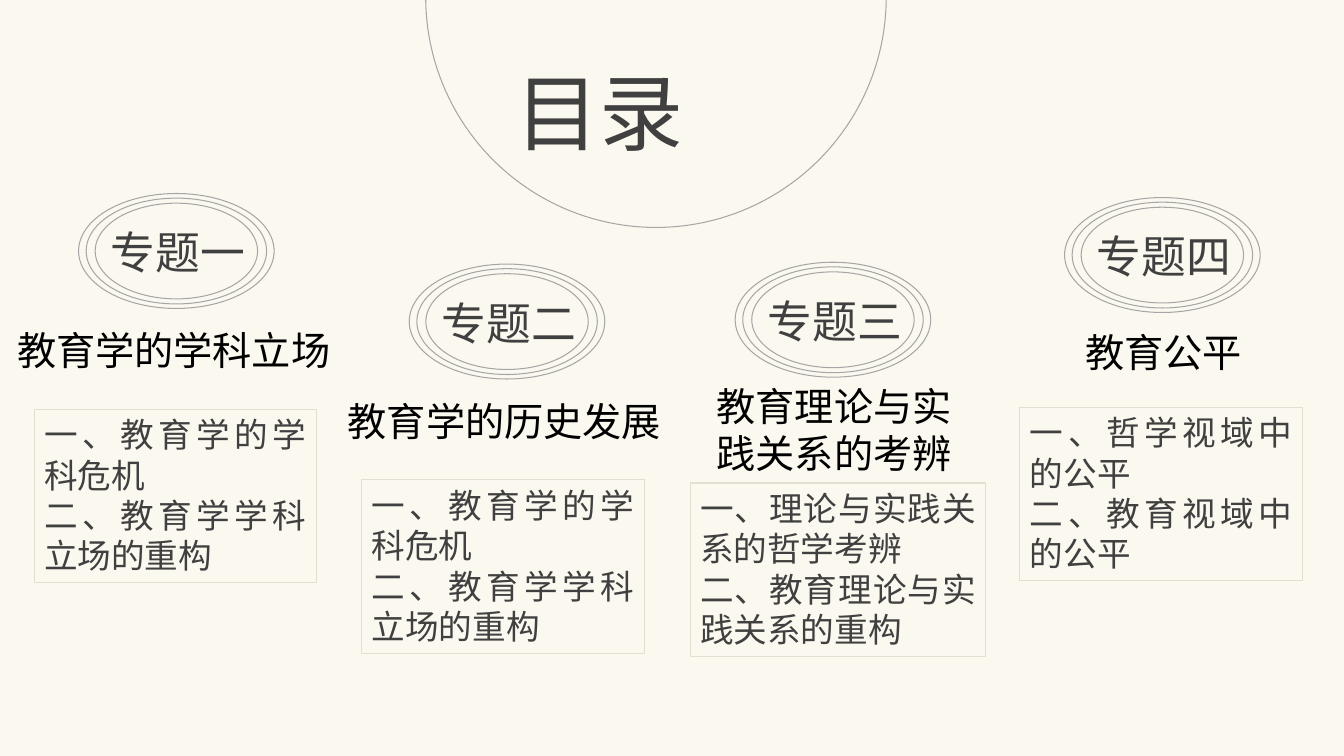
import math

import pptx
import pptx.chart.data
import pptx.dml.color
import pptx.enum.shapes
import pptx.enum.text
import pptx.oxml
import pptx.oxml.ns
import pptx.util

Pt = pptx.util.Pt
OVAL = pptx.enum.shapes.MSO_SHAPE.OVAL
RECT = pptx.enum.shapes.MSO_SHAPE.RECTANGLE
ALIGN = pptx.enum.text.PP_ALIGN
HUES = {"paper": "FBF8EF", "ring": "A6A6A6", "frame": "E3DED1",
        "text": "404040", "head": "000000"}
SANS = "Noto Sans CJK SC"
SLIM = "Roboto Condensed"


def hue(name):
    return pptx.dml.color.RGBColor.from_string(HUES[name])


def write(shape, lines, size, font, color, align):
    frame = shape.text_frame
    frame.word_wrap = True
    frame.auto_size = pptx.enum.text.MSO_AUTO_SIZE.SHAPE_TO_FIT_TEXT
    frame.vertical_anchor = pptx.enum.text.MSO_ANCHOR.TOP
    for i, line in enumerate(lines):
        para = frame.add_paragraph() if i else frame.paragraphs[0]
        para.alignment = align
        run = para.add_run()
        run.text = line
        run.font.size = Pt(size)
        run.font.name = font
        run.font.color.rgb = hue(color)
        # East Asian typeface
        asian = pptx.oxml.parse_xml(
            f'<a:ea {pptx.oxml.ns.nsdecls("a")} typeface="{SANS}"/>')
        run.font.latin.addnext(asian) if hasattr(run.font, "latin") else \
            run.font._element.append(asian)


deck = pptx.Presentation()
deck.slide_width, deck.slide_height = Pt(960), Pt(540)
slide = deck.slides.add_slide(deck.slide_layouts[5])
shapes = slide.shapes
slide.background.fill.solid()
slide.background.fill.fore_color.rgb = hue("paper")

# Half disc at the top edge
mid, base, radius = 468.6, -2, 164.5
steps = [math.radians(a) for a in range(0, 181, 2)]
rim = [(Pt(mid + radius * math.cos(a)), Pt(base + radius * math.sin(a)))
       for a in steps]
pen = shapes.build_freeform(*rim[0])
pen.add_line_segments(rim[1:], close=True)
disc = pen.convert_to_shape()
disc.shadow.inherit = False
disc.fill.solid()
disc.fill.fore_color.rgb = hue("paper")
disc.line.color.rgb = hue("ring")
disc.line.width = Pt(0)

# Title, in front of the disc
title = shapes.title
title.left, title.top, title.width, title.height = Pt(360.7), Pt(39.6), Pt(212.4), Pt(80)
write(title, ["目录"], 60, SLIM, "text", ALIGN.JUSTIFY)
title.element.getparent().append(title.element)

# Topics: label, ring centre, heading (lines, top, width, align),
# frame (left, top, width), points
topics = [
    ("专题一", (126, 179.3), (["教育学的学科立场"], 229.7, 243.4, ALIGN.LEFT),
     (24.5, 292.3, 201.6), ["一、教育学的学科危机", "二、教育学学科立场的重构"]),
    ("专题二", (362.2, 229.7), (["教育学的历史发展"], 280, 243.4, ALIGN.LEFT),
     (258.5, 342.7, 201.6), ["一、教育学的学科危机", "二、教育学学科立场的重构"]),
    ("专题三", (595, 228.4), (["教育理论与实", "践关系的考辨"], 269.3, 243.4, ALIGN.CENTER),
     (493, 345, 211.3), ["一、理论与实践关系的哲学考辨", "二、教育理论与实践关系的重构"]),
    ("专题四", (830.3, 182.2), (["教育公平"], 231, 128.9, ALIGN.CENTER),
     (728.6, 291, 201.6), ["一、哲学视域中的公平", "二、教育视域中的公平"]),
]
rings = [(139.7, 82.1), (128.9, 75.6), (116, 68.4)]

for label, (x, y), (head, top, wide, align), (left, high, span), points in topics:
    # Concentric rings
    for w, h in rings:
        ring = shapes.add_shape(OVAL, Pt(x - w / 2), Pt(y - h / 2), Pt(w), Pt(h))
        ring.shadow.inherit = False
        ring.fill.solid()
        ring.fill.fore_color.rgb = hue("paper")
        ring.line.color.rgb = hue("ring")
        ring.line.width = Pt(0)

    # Framed points
    box = shapes.add_shape(RECT, Pt(left), Pt(high), Pt(span), Pt(123.8))
    box.shadow.inherit = False
    box.fill.background()
    box.line.color.rgb = hue("frame")
    box.line.width = Pt(0.75)
    write(box, points, 24, SLIM, "text", ALIGN.JUSTIFY)

    # Label and heading
    tag = shapes.add_textbox(Pt(x - 112.8), Pt(y - 22.3), Pt(228.2), Pt(46))
    write(tag, [label], 32, SLIM, "text", ALIGN.CENTER)
    name = shapes.add_textbox(Pt(x + 0.8 - wide / 2), Pt(top), Pt(wide),
                              Pt(7.2 + 33.8 * len(head)))
    write(name, head, 28, SANS, "head", align)

deck.save("out.pptx")
